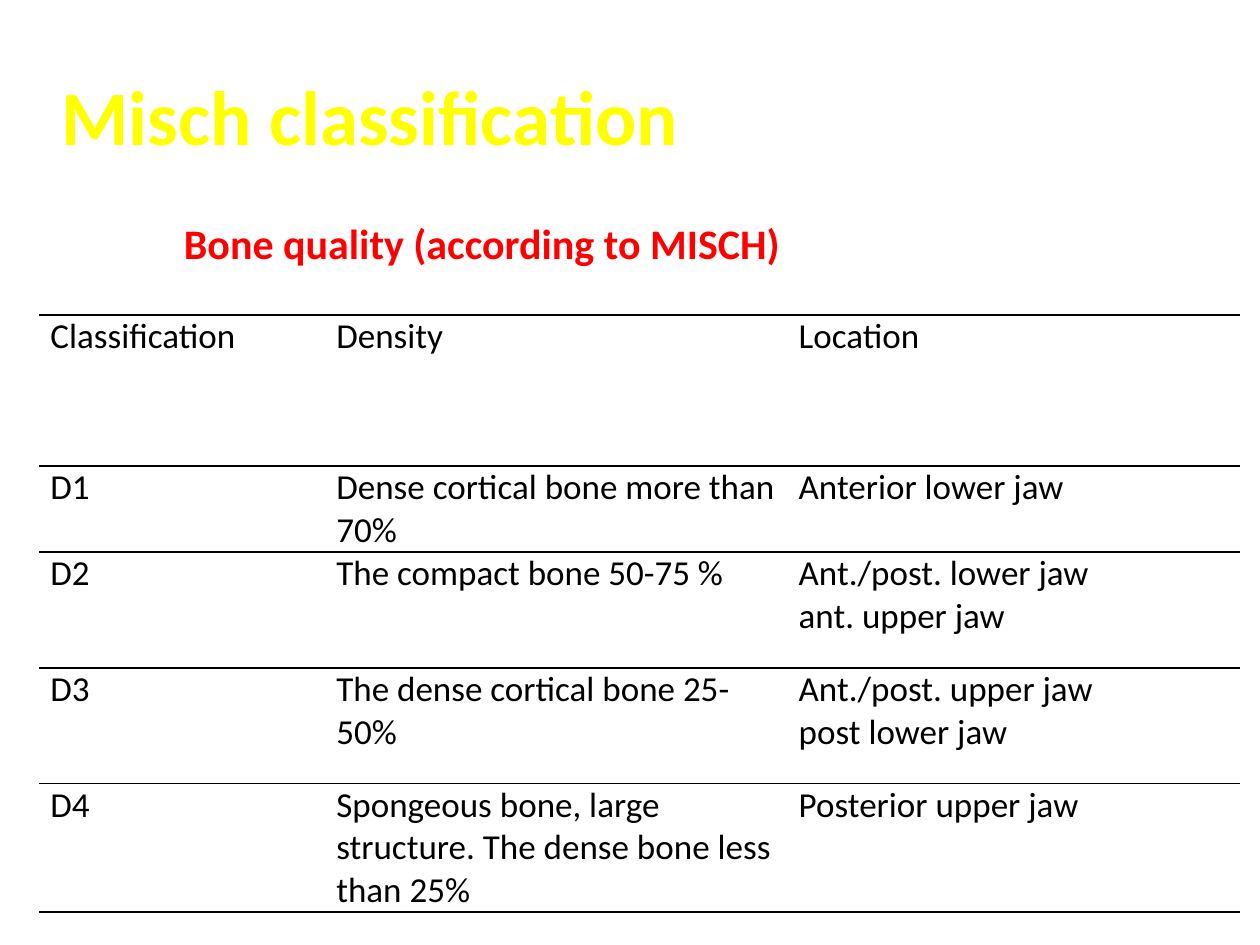
import dataclasses
import pptx
import pptx.util
import pptx.dml.color
import pptx.enum.text
import pptx.oxml
import pptx.oxml.ns
import lxml.etree

WIDE, HIGH = 10, 7.5
FONT = "Calibri"
PLAIN = "{2D5ABB26-0587-4C30-8999-92F81FD0307C}"  # no style, no grid
ALIGN = pptx.enum.text.PP_ALIGN
MIDDLE = pptx.enum.text.MSO_ANCHOR.MIDDLE
inch = pptx.util.Inches


@dataclasses.dataclass
class Head:
    text: str
    box: tuple[float, float, float, float]  # shares of the slide
    size: int
    tint: str
    align: ALIGN


@dataclasses.dataclass
class Row:
    cells: tuple[str, str, str]
    high: float
    top: float = 1
    base: float = 1


HEADS = [
    Head("Bone quality (according to MISCH)", (0.023, 0.177, 0.719, 0.16),
         24, "FF0000", ALIGN.CENTER),
    Head("Misch classification", (0.039, 0.021, 0.9, 0.201),
         44, "FFFF00", ALIGN.LEFT),
]
COLS = (2.27, 3.67, 3.59)
ROWS = [
    Row(("Classification", "Density", "Location"), 1.2, 1.5, 1.5),
    Row(("D1", "Dense cortical bone more than 70%", "Anterior lower jaw"),
        0.6, 1.5, 1),
    Row(("D2", "The compact bone 50-75 %",
         "Ant./post. lower jaw\nant. upper jaw"), 0.92),
    Row(("D3", "The dense cortical bone 25-50%",
         "Ant./post. upper jaw\npost lower jaw"), 0.92),
    Row(("D4", "Spongeous bone, large structure. The dense bone less than 25%",
         "Posterior upper jaw"), 0.6, 1, 1.5),
]


def color(code: str) -> pptx.dml.color.RGBColor:
    return pptx.dml.color.RGBColor.from_string(code)


def style(frame, size: int, tint: str, bold: bool = False) -> None:
    for para in frame.paragraphs:
        for run in para.runs:
            run.font.name = FONT
            run.font.size = pptx.util.Pt(size)
            run.font.bold = bold
            run.font.color.rgb = color(tint)


def rule(cell, side: str, width: float) -> None:
    """Draw one black border of a cell."""
    tag = pptx.oxml.ns.qn
    line = lxml.etree.SubElement(cell._tc.get_or_add_tcPr(), tag("a:" + side),
                                 w=str(pptx.util.Pt(width)))
    fill = lxml.etree.SubElement(line, tag("a:solidFill"))
    lxml.etree.SubElement(fill, tag("a:srgbClr"), val="000000")


def draw_head(slide, head: Head) -> None:
    left, top, wide, high = head.box
    box = slide.shapes.add_textbox(inch(left * WIDE), inch(top * HIGH),
                                   inch(wide * WIDE), inch(high * HIGH))
    frame = box.text_frame
    frame.word_wrap = True
    frame.vertical_anchor = MIDDLE
    frame.text = head.text
    frame.paragraphs[0].alignment = head.align
    style(frame, head.size, head.tint, True)


def draw_cell(cell, text: str, row: Row) -> None:
    cell.margin_left = cell.margin_right = inch(0.09)
    cell.margin_top = cell.margin_bottom = 0
    rule(cell, "lnT", row.top)
    rule(cell, "lnB", row.base)
    cell.fill.background()
    cell.text_frame.text = text
    style(cell.text_frame, 20, "000000")


def draw_table(slide) -> None:
    shape = slide.shapes.add_table(
        len(ROWS), len(COLS), inch(0.31), inch(2.5),
        inch(sum(COLS)), inch(sum(row.high for row in ROWS)))
    table = shape.table
    table.first_row = table.horz_banding = False
    table._tbl.tblPr.find(pptx.oxml.ns.qn("a:tableStyleId")).text = PLAIN
    for col, wide in zip(table.columns, COLS):
        col.width = inch(wide)
    for line, row in zip(table.rows, ROWS):
        line.height = inch(row.high)
        for cell, text in zip(line.cells, row.cells):
            draw_cell(cell, text, row)


def main() -> None:
    deck = pptx.Presentation()
    deck.slide_width, deck.slide_height = inch(WIDE), inch(HIGH)
    slide = deck.slides.add_slide(deck.slide_layouts[6])
    # Bone table
    draw_table(slide)
    # Headings
    for head in HEADS:
        draw_head(slide, head)
    deck.save("out.pptx")


if __name__ == "__main__":
    main()
